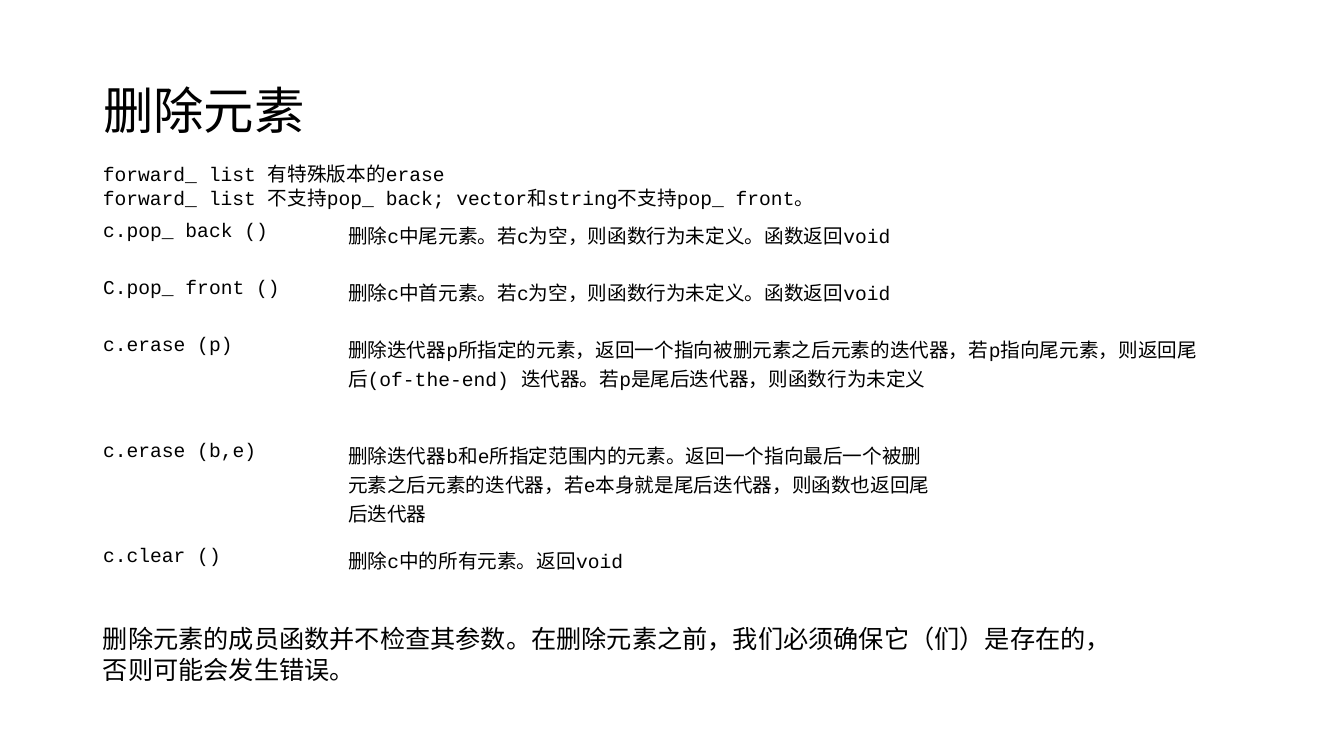
from lxml.etree import SubElement
from pptx import Presentation
from pptx.dml.color import RGBColor
from pptx.enum.text import MSO_ANCHOR, PP_ALIGN
from pptx.oxml.ns import qn
from pptx.util import Emu, Pt

BLACK = RGBColor(0x00, 0x00, 0x00)
CJK = "Noto Sans CJK SC"
MONO = "Courier New"
LEFT = 93


def px(n):
    return Emu(round(n * 914400 / 100.8))


def write(tf, lines, size, font, spacing=None):
    tf.word_wrap = True
    tf.text = "\n".join(lines)
    for p in tf.paragraphs:
        p.alignment = PP_ALIGN.LEFT
        p.line_spacing = spacing
        p.font.size = Pt(size)
        p.font.color.rgb = BLACK
        p.font.name = font
        SubElement(p.font._element, qn("a:ea")).set("typeface", CJK)


prs = Presentation()
prs.slide_width, prs.slide_height = px(1344), px(756)
s = prs.slides.add_slide(prs.slide_layouts[5])

title = s.shapes.title
title.left, title.top, title.width, title.height = px(LEFT), px(40), px(1159), px(146)
title.text_frame.vertical_anchor = MSO_ANCHOR.MIDDLE
write(title.text_frame, ["删除元素"], 36, CJK, 0.9)

notes = [
    (157, 784, 57, 14, MONO, 16.8, [
        "forward_ list 有特殊版本的erase",
        "forward_ list 不支持pop_ back; vector和string不支持pop_ front。",
    ]),
    (619, 1026, 72, 18, CJK, 21.5, [
        "删除元素的成员函数并不检查其参数。在删除元素之前，我们必须确保它（们）是存在的，否则可能会发生错误。",
    ]),
]
for top, width, height, size, font, spacing, lines in notes:
    sp = s.shapes.add_textbox(px(LEFT), px(top), px(width), px(height))
    write(sp.text_frame, lines, size, font, Pt(spacing))

operations = [
    (57, "c.pop_ back ()", ["删除c中尾元素。若c为空，则函数行为未定义。函数返回void"]),
    (57, "C.pop_ front ()", ["删除c中首元素。若c为空，则函数行为未定义。函数返回void"]),
    (106, "c.erase (p)", [
        "删除迭代器p所指定的元素，返回一个指向被删元素之后元素的迭代器，若p指向尾元素，则返回尾后(of-the-end) 迭代器。若p是尾后迭代器，则函数行为未定义",
    ]),
    (105, "c.erase (b,e)", [
        "删除迭代器b和e所指定范围内的元素。返回一个指向最后一个被删",
        "元素之后元素的迭代器，若e本身就是尾后迭代器，则函数也返回尾",
        "后迭代器",
    ]),
    (57, "c.clear ()", ["删除c中的所有元素。返回void"]),
]
table = s.shapes.add_table(len(operations), 2, px(LEFT), px(216), px(1116), px(382)).table
table.first_row = table.horz_banding = False
table.columns[0].width, table.columns[1].width = px(245), px(871)
for row, (height, call, effect) in zip(table.rows, operations):
    row.height = px(height)
    for cell, lines in zip(row.cells, ([call], effect)):
        cell.fill.background()
        write(cell.text_frame, lines, 14, MONO)

prs.save("out.pptx")
